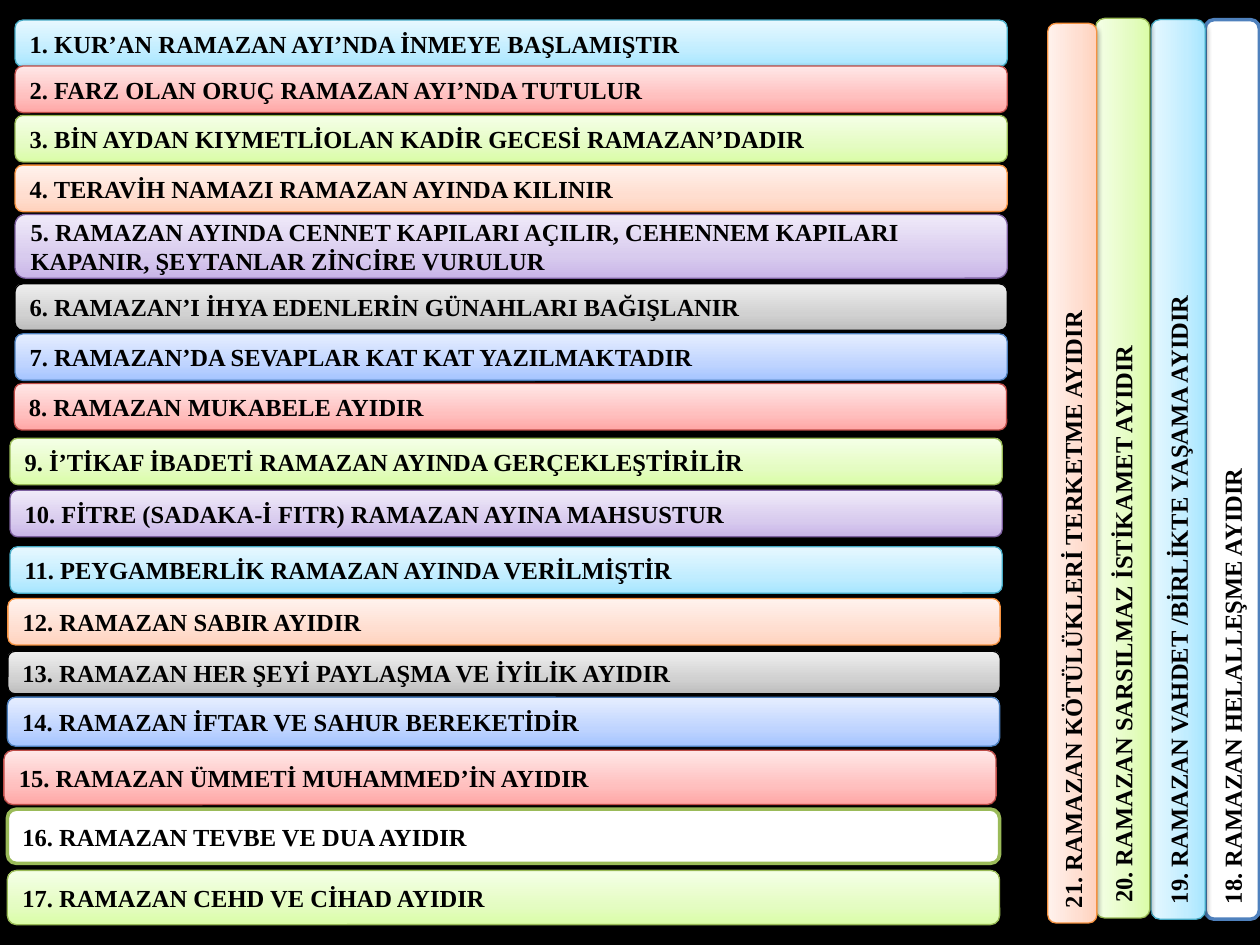
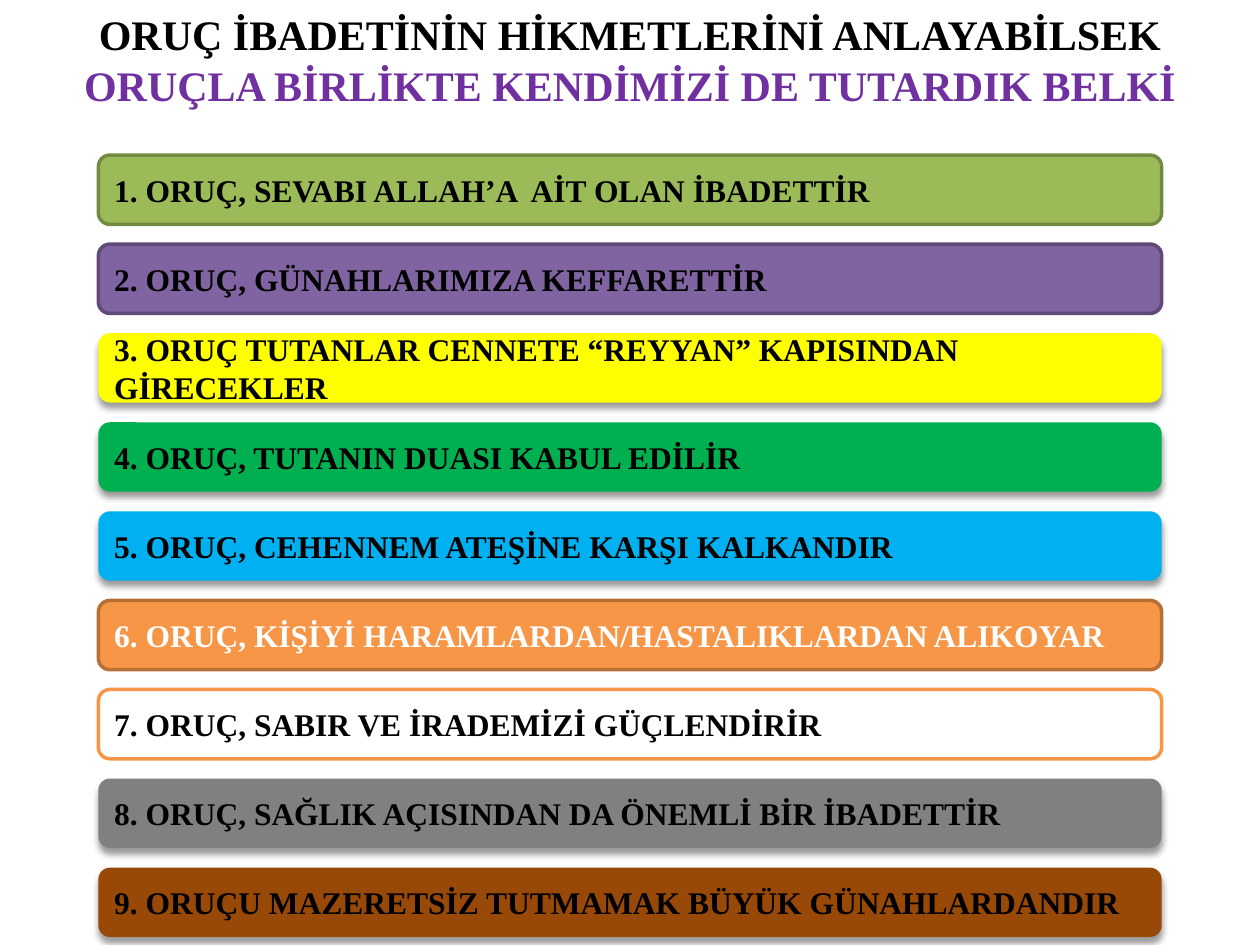
"""Build two slides of numbered bars about Ramadan and fasting."""
from copy import deepcopy
from dataclasses import dataclass
from typing import Optional

from lxml import etree
from pptx import Presentation
from pptx.dml.color import RGBColor
from pptx.enum.shapes import MSO_SHAPE
from pptx.enum.text import MSO_ANCHOR, MSO_AUTO_SIZE, PP_ALIGN
from pptx.oxml.ns import qn
from pptx.util import Pt

ROUNDED = MSO_SHAPE.ROUNDED_RECTANGLE
MIDDLE = MSO_ANCHOR.MIDDLE
NO_AUTOFIT = MSO_AUTO_SIZE.NONE
LEFT, CENTER = PP_ALIGN.LEFT, PP_ALIGN.CENTER

FONT = "Times New Roman"
BLACK = RGBColor(0x00, 0x00, 0x00)
WHITE = RGBColor(0xFF, 0xFF, 0xFF)
GREEN = RGBColor(0x9B, 0xBB, 0x59)
DARK_GREEN = RGBColor(0x73, 0x8A, 0x42)
PURPLE = RGBColor(0x80, 0x64, 0xA2)
DARK_PURPLE = RGBColor(0x5F, 0x4A, 0x78)
ORANGE = RGBColor(0xF7, 0x96, 0x46)
DARK_ORANGE = RGBColor(0xB7, 0x6F, 0x34)
BLUE = RGBColor(0x4F, 0x81, 0xBD)
YELLOW = RGBColor(0xFF, 0xFF, 0x00)
BRIGHT_GREEN = RGBColor(0x00, 0xB0, 0x50)
BRIGHT_BLUE = RGBColor(0x00, 0xB0, 0xF0)
GRAY = RGBColor(0x80, 0x80, 0x80)
BROWN = RGBColor(0x98, 0x48, 0x07)
VIOLET = RGBColor(0x70, 0x30, 0xA0)


@dataclass(frozen=True)
class Shadow:
    """Downward shadow; blur and distance in points, opacity in percent."""
    opacity: int
    blur: float
    distance: float


SOFT = Shadow(38, 3.1, 1.6)
DEEP = Shadow(40, 4, 3)
STOP_POSITIONS = (0, 0.35, 1)


@dataclass(frozen=True)
class Style:
    """Look of a bar: one colour or three gradient shades, edge and shadow."""
    shades: tuple[RGBColor, ...]
    edge: Optional[RGBColor] = None
    edge_width: float = 2
    shadow: Optional[Shadow] = None
    ink: RGBColor = BLACK


@dataclass(frozen=True)
class Frame:
    """Position of a bar in points, before rotation."""
    left: float
    top: float
    width: float
    height: float
    rotation: float = 0


@dataclass(frozen=True)
class Entry:
    """Sentence of a list with its style and place."""
    text: str
    style: Style
    left: float = 0
    top: float = 0
    height: float = 26.6


def pastel(edge: str, *shades: str) -> Style:
    """Return a gradient style from hexadecimal colours."""
    colors = tuple(RGBColor.from_string(shade) for shade in shades)
    return Style(colors, RGBColor.from_string(edge), 0.75, SOFT)


def outlined(fill: RGBColor, edge: RGBColor, ink: RGBColor = BLACK) -> Style:
    """Return a flat style with a strong edge."""
    return Style((fill,), edge, ink=ink)


def raised(fill: RGBColor) -> Style:
    """Return a flat style with a deep shadow and no edge."""
    return Style((fill,), shadow=DEEP)


AQUA_TINT = pastel("46AAC5", "A7E6FF", "C1EDFF", "E7F8FF")
RED_TINT = pastel("BF4C48", "FFA6A5", "FFC0BF", "FFE7E7")
GREEN_TINT = pastel("98B955", "DAFDA7", "E4FCC2", "F5FFE7")
ORANGE_TINT = pastel("F69240", "FFD2BD", "FFDED0", "FFF2ED")
PURPLE_TINT = pastel("7D60A0", "C9B5E8", "D8CBEE", "F0EAF9")
GRAY_TINT = pastel("000000", "BDBDBD", "D1D1D1", "EEEEEE")
BLUE_TINT = pastel("4B7EBC", "A4C4FF", "BFD4FF", "E6EEFF")

ROW_WIDTH = 567
COLUMN_LENGTH = 514.1
RAMADAN_ROWS = (
    Entry("KUR’AN RAMAZAN AYI’NDA İNMEYE BAŞLAMIŞTIR", AQUA_TINT, 8.6, 11.5),
    Entry("FARZ OLAN ORUÇ RAMAZAN AYI’NDA TUTULUR", RED_TINT, 8.6, 37.8),
    Entry("BİN AYDAN KIYMETLİOLAN KADİR GECESİ RAMAZAN’DADIR", GREEN_TINT, 8.6, 66),
    Entry("TERAVİH NAMAZI RAMAZAN AYINDA KILINIR", ORANGE_TINT, 8.6, 94.4),
    Entry("RAMAZAN AYINDA CENNET KAPILARI AÇILIR, CEHENNEM KAPILARI KAPANIR, "
          "ŞEYTANLAR ZİNCİRE VURULUR", PURPLE_TINT, 8.6, 122.6, 36.4),
    Entry("RAMAZAN’I İHYA EDENLERİN GÜNAHLARI BAĞIŞLANIR", GRAY_TINT, 8.6, 162.2),
    Entry("RAMAZAN’DA SEVAPLAR KAT KAT YAZILMAKTADIR", BLUE_TINT, 8.6, 190.8),
    Entry("RAMAZAN MUKABELE AYIDIR", RED_TINT, 8.2, 219.2),
    Entry("İ’TİKAF İBADETİ RAMAZAN AYINDA GERÇEKLEŞTİRİLİR", GREEN_TINT, 5.7, 250.4),
    Entry("FİTRE (SADAKA-İ FITR) RAMAZAN AYINA MAHSUSTUR", PURPLE_TINT, 5.7, 280.2),
    Entry("PEYGAMBERLİK RAMAZAN AYINDA VERİLMİŞTİR", AQUA_TINT, 5.7, 312.4),
    Entry("RAMAZAN SABIR AYIDIR", ORANGE_TINT, 4.5, 342),
    Entry("RAMAZAN HER ŞEYİ PAYLAŞMA VE İYİLİK AYIDIR", GRAY_TINT, 4.5, 372.2, 24.3),
    Entry("RAMAZAN İFTAR VE SAHUR BEREKETİDİR", BLUE_TINT, 4.2, 398.4, 28),
    Entry("RAMAZAN ÜMMETİ MUHAMMED’İN AYIDIR", RED_TINT, 2.2, 428.8, 31),
    Entry("RAMAZAN TEVBE VE DUA AYIDIR", outlined(WHITE, GREEN), 4.2, 462.4, 31),
    Entry("RAMAZAN CEHD VE CİHAD AYIDIR", GREEN_TINT, 4.2, 497.4, 31),
)
RAMADAN_COLUMNS = (
    Entry("RAMAZAN HELALLEŞME AYIDIR", outlined(WHITE, BLUE), 447.1, 252.7, 31),
    Entry("RAMAZAN VAHDET /BİRLİKTE YAŞAMA AYIDIR", AQUA_TINT, 416.2, 252.7, 31),
    Entry("RAMAZAN SARSILMAZ İSTİKAMET AYIDIR", GREEN_TINT, 384.5, 252, 31),
    Entry("RAMAZAN KÖTÜLÜKLERİ TERKETME AYIDIR", ORANGE_TINT, 355.7, 256.3, 28.1),
)
FASTING_TITLE = (
    ("ORUÇ İBADETİNİN HİKMETLERİNİ ANLAYABİLSEK", BLACK),
    ("ORUÇLA BİRLİKTE KENDİMİZİ DE TUTARDIK BELKİ", VIOLET),
)
FASTING_ROWS = (
    Entry("ORUÇ, SEVABI ALLAH’A  AİT OLAN İBADETTİR", outlined(GREEN, DARK_GREEN)),
    Entry("ORUÇ, GÜNAHLARIMIZA KEFFARETTİR", outlined(PURPLE, DARK_PURPLE)),
    Entry("ORUÇ TUTANLAR CENNETE “REYYAN” KAPISINDAN GİRECEKLER", raised(YELLOW)),
    Entry("ORUÇ, TUTANIN DUASI KABUL EDİLİR", raised(BRIGHT_GREEN)),
    Entry("ORUÇ, CEHENNEM ATEŞİNE KARŞI KALKANDIR", raised(BRIGHT_BLUE)),
    Entry("ORUÇ, KİŞİYİ HARAMLARDAN/HASTALIKLARDAN ALIKOYAR",
          outlined(ORANGE, DARK_ORANGE, WHITE)),
    Entry("ORUÇ, SABIR VE İRADEMİZİ GÜÇLENDİRİR", outlined(WHITE, ORANGE)),
    Entry("ORUÇ, SAĞLIK AÇISINDAN DA ÖNEMLİ BİR İBADETTİR", raised(GRAY)),
    Entry("ORUÇU MAZERETSİZ TUTMAMAK BÜYÜK GÜNAHLARDANDIR", raised(BROWN)),
)
FASTING_TOP, FASTING_PITCH = 88.6, 50.9


def format_paragraph(para, size: float, color: RGBColor, align: PP_ALIGN) -> None:
    """Apply the shared bold lettering to every run of a paragraph."""
    para.alignment = align
    for span in para.runs:
        span.font.name = FONT
        span.font.size = Pt(size)
        span.font.bold = True
        span.font.color.rgb = color


def paint(box, shades: tuple[RGBColor, ...]) -> None:
    """Fill a shape with one colour or with a gradient rising from its base."""
    if len(shades) == 1:
        box.fill.solid()
        box.fill.fore_color.rgb = shades[0]
        return
    box.fill.gradient()
    box.fill.gradient_angle = 90
    stops = box._element.spPr.find(qn("a:gradFill")).find(qn("a:gsLst"))
    stops.append(deepcopy(stops[0]))
    for stop, position, shade in zip(box.fill.gradient_stops, STOP_POSITIONS, shades):
        stop.position = position
        stop.color.rgb = shade


def cast_shadow(box, shadow: Optional[Shadow]) -> None:
    """Replace the theme shadow by the given one, or by none."""
    box.shadow.inherit = False
    if shadow is None:
        return
    effects = box._element.spPr.find(qn("a:effectLst"))
    outer = etree.SubElement(
        effects, qn("a:outerShdw"), blurRad=str(Pt(shadow.blur)),
        dist=str(Pt(shadow.distance)), dir="5400000", rotWithShape="0")
    color = etree.SubElement(outer, qn("a:srgbClr"), val=str(BLACK))
    etree.SubElement(color, qn("a:alpha"), val=str(shadow.opacity * 1000))


def draw_bar(page, frame: Frame, text: str, style: Style, size: float) -> None:
    """Draw one rounded bar with its sentence."""
    box = page.shapes.add_shape(
        ROUNDED, Pt(frame.left), Pt(frame.top), Pt(frame.width), Pt(frame.height))
    box.rotation = frame.rotation
    paint(box, style.shades)
    if style.edge is None:
        box.line.fill.background()
    else:
        box.line.color.rgb = style.edge
        box.line.width = Pt(style.edge_width)
    cast_shadow(box, style.shadow)
    box.text_frame.text = text
    box.text_frame.word_wrap = True
    box.text_frame.vertical_anchor = MIDDLE
    format_paragraph(box.text_frame.paragraphs[0], size, style.ink, LEFT)


def build_ramadan(deck) -> None:
    """Build the black slide with rows and upright columns."""
    page = deck.slides.add_slide(deck.slide_layouts[6])
    page.background.fill.solid()
    page.background.fill.fore_color.rgb = BLACK
    for number, entry in enumerate(RAMADAN_ROWS + RAMADAN_COLUMNS, 1):
        upright = number > len(RAMADAN_ROWS)
        frame = Frame(entry.left, entry.top, COLUMN_LENGTH if upright else ROW_WIDTH,
                      entry.height, 270 if upright else 0)
        draw_bar(page, frame, f"{number}. {entry.text}", entry.style, 14)


def build_fasting(deck) -> None:
    """Build the white slide with a title and evenly spaced bars."""
    page = deck.slides.add_slide(deck.slide_layouts[5])
    title = page.shapes.title
    title.left, title.top, title.width, title.height = Pt(0), Pt(0), Pt(720), Pt(67.7)
    title.text_frame.text = "\n".join(line for line, _ in FASTING_TITLE)
    title.text_frame.word_wrap = True
    title.text_frame.auto_size = NO_AUTOFIT
    title.text_frame.vertical_anchor = MIDDLE
    for para, (_, color) in zip(title.text_frame.paragraphs, FASTING_TITLE):
        format_paragraph(para, 24, color, CENTER)
    for index, entry in enumerate(FASTING_ROWS):
        frame = Frame(56.2, FASTING_TOP + index * FASTING_PITCH, 607.6, 39.6)
        draw_bar(page, frame, f"{index + 1}. {entry.text}", entry.style, 18)


def main() -> None:
    """Create and save the deck."""
    deck = Presentation()
    deck.slide_width, deck.slide_height = Pt(720), Pt(540)
    build_ramadan(deck)
    build_fasting(deck)
    deck.save("out.pptx")


if __name__ == "__main__":
    main()
